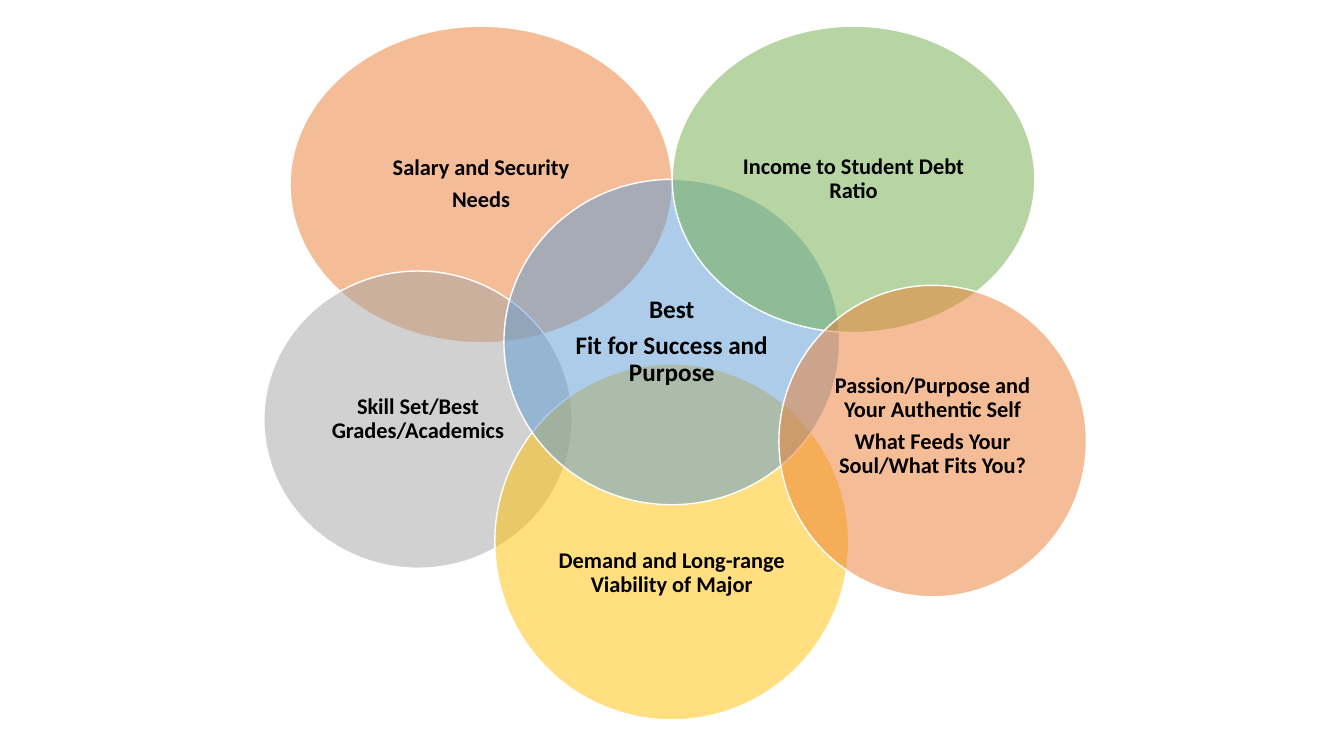
from lxml.etree import SubElement
from pptx import Presentation
from pptx.dml.color import RGBColor as RGB
from pptx.enum.shapes import MSO_SHAPE as SHAPE
from pptx.enum.text import MSO_ANCHOR as ANCHOR, PP_ALIGN as ALIGN
from pptx.oxml.ns import qn
from pptx.util import Cm, Pt

COLORS = {"orange": "ED7D31", "gray": "A5A5A5", "gold": "FFC000", "blue": "5B9BD5",
          "green": "70AD47", "edge": "FFFFFF", "text": "000000"}
INSET = 0.18
FRAME = {"word_wrap": True, "vertical_anchor": ANCHOR.MIDDLE,
         "margin_left": Cm(INSET), "margin_right": Cm(INSET),
         "margin_top": Cm(INSET), "margin_bottom": Cm(INSET)}
FONT = {"name": "Calibri", "bold": True}

CIRCLES = [
    ((0.66, 0, 9.63, 7.98), "orange", 16, ["Salary and Security", "Needs"], {}),
    ((0, 6.17, 7.77, 7.49), "gray", 16, ["Skill Set/Best Grades/Academics"], {}),
    ((5.82, 8.51, 8.92, 8.97), "gold", 16, ["Demand and Long-range Viability of Major"],
     {"margin_top": Cm(INSET + 1.57)}),
    ((6.05, 3.86, 8.46, 8.2), "blue", 18, ["Best", "Fit for Success and Purpose"], {}),
    ((10.29, 0, 9.14, 7.72), "green", 16, ["Income to Student Debt Ratio"], {}),
    ((12.98, 6.53, 7.75, 7.85), "orange", 16,
     ["Passion/Purpose and Your Authentic Self", "What Feeds Your Soul/What Fits You?"],
     {"margin_bottom": Cm(INSET + 0.76)}),
]


def set_all(obj, values):
    """Set every attribute in values on obj."""
    for name, value in values.items():
        setattr(obj, name, value)


def add_circle(s, box, color, size, lines, margins):
    """Add a half-transparent ellipse with centred text in the given box."""
    sp = s.shapes.add_shape(SHAPE.OVAL, *map(Cm, box))
    sp.shadow.inherit = False
    sp.fill.solid()
    sp.fill.fore_color.rgb = RGB.from_string(COLORS[color])
    clr = sp.element.spPr.find(qn("a:solidFill")).find(qn("a:srgbClr"))
    SubElement(clr, qn("a:alpha")).set("val", "50000")
    sp.line.color.rgb = RGB.from_string(COLORS["edge"])
    sp.line.width = Pt(1)
    tf = sp.text_frame
    set_all(tf, {**FRAME, **margins})
    tf.text = "\n".join(lines)
    for p in tf.paragraphs:
        set_all(p, {"alignment": ALIGN.CENTER, "line_spacing": 0.9,
                    "space_after": Pt(round(size * 0.35, 1))})
        for r in p.runs:
            set_all(r.font, {**FONT, "size": Pt(size)})
            r.font.color.rgb = RGB.from_string(COLORS["text"])


def add_venn(s, left, top):
    """Place the overlapping circles relative to the diagram's corner."""
    for (x, y, w, h), *look in CIRCLES:
        add_circle(s, (left + x, top + y, w, h), *look)


def main():
    """Build the career-fit slide and save it."""
    prs = Presentation()
    set_all(prs, {"slide_width": Cm(33.87), "slide_height": Cm(19.05)})
    s = prs.slides.add_slide(prs.slide_layouts[6])
    add_venn(s, 6.65, 0.66)
    prs.save("out.pptx")


if __name__ == "__main__":
    main()
